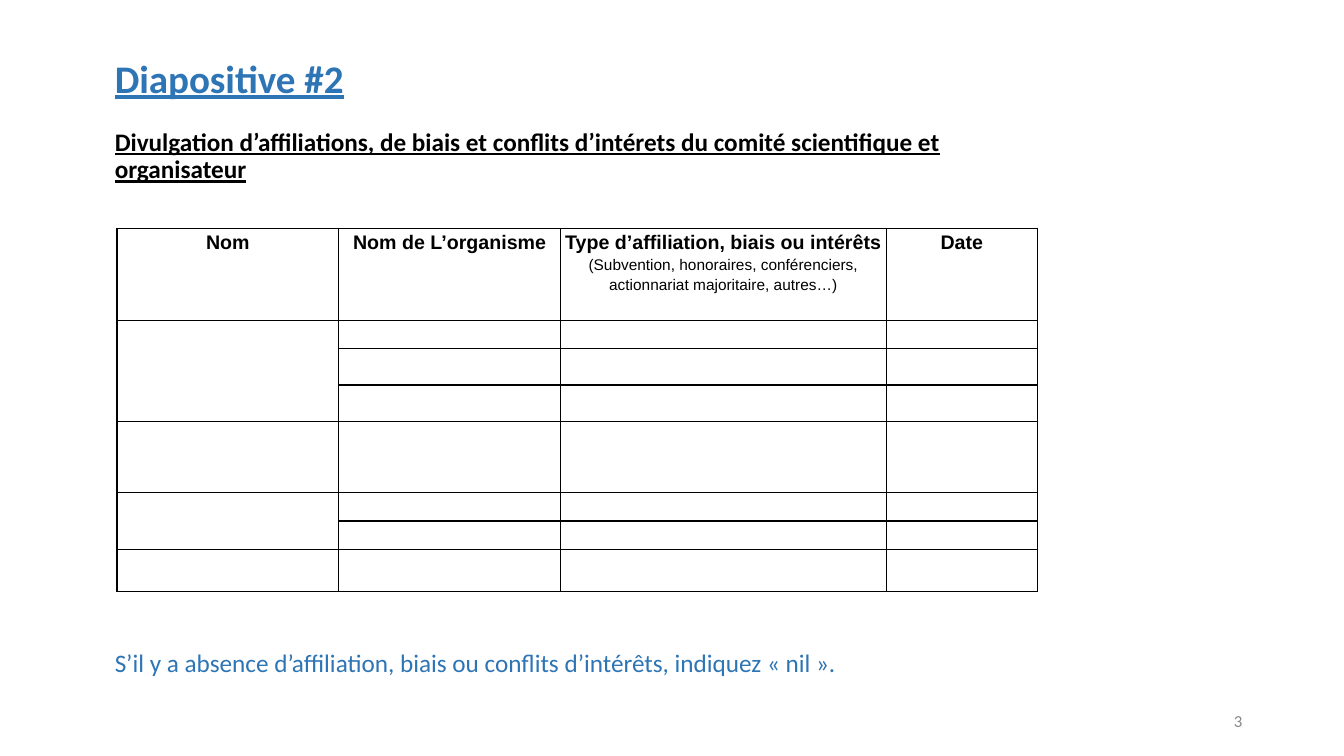
from lxml import etree
from pptx import Presentation
from pptx.dml.color import RGBColor
from pptx.enum import text
from pptx.oxml.ns import qn
from pptx.util import Inches, Pt

BLUE, BLACK, GREY = "2E75B5", "000000", "888888"


def style(para, size, color, font="Calibri", bold=False, underline=False):
    for span in para.runs:
        span.font.name = font
        span.font.size = Pt(size)
        span.font.bold = bold
        span.font.underline = underline
        span.font.color.rgb = RGBColor.from_string(color)


def add_text(page, left, top, width, height, content):
    box = page.shapes.add_textbox(Inches(left), Inches(top), Inches(width), Inches(height))
    box.text_frame.word_wrap = True
    box.text_frame.text = content
    return box.text_frame


deck = Presentation()
deck.slide_width, deck.slide_height = Inches(13.33), Inches(7.5)
page = deck.slides.add_slide(deck.slide_layouts[6])

# Heading and subtitle
heading = add_text(
    page, 1.04, 0.73, 8.63, 1.26,
    "Diapositive #2\n"
    "Divulgation d’affiliations, de biais et conflits d’intérets du comité scientifique et organisateur",
)
heading.vertical_anchor = text.MSO_ANCHOR.MIDDLE
heading.margin_bottom = Inches(0.35)
for para, size, color in zip(heading.paragraphs, (27.9, 18), (BLUE, BLACK)):
    para.line_spacing = 0.9
    style(para, size, color, bold=True, underline=True)
heading.paragraphs[1].space_before = Pt(20)

# Slide number
number = add_text(page, 9.42, 6.95, 3, 0.4, "3")
number.vertical_anchor = text.MSO_ANCHOR.MIDDLE
number.paragraphs[0].alignment = text.PP_ALIGN.RIGHT
style(number.paragraphs[0], 12, GREY)

# Disclosure table
headers = [
    "Nom",
    "Nom de L’organisme",
    "Type d’affiliation, biais ou intérêts\n"
    "(Subvention, honoraires, conférenciers, actionnariat majoritaire, autres…)",
    "Date",
]
column_widths = [2.2, 2.2, 3.23, 1.5]
row_heights = [0.91, 0.28, 0.36, 0.36, 0.71, 0.28, 0.28, 0.42]
table = page.shapes.add_table(
    len(row_heights), len(column_widths), Inches(1.16), Inches(2.27),
    Inches(sum(column_widths)), Inches(sum(row_heights)),
).table
table.first_row = table.horz_banding = False
for column, width in zip(table.columns, column_widths):
    column.width = Inches(width)
for row, height in zip(table.rows, row_heights):
    row.height = Inches(height)

for cell in table.iter_cells():
    cell.margin_left = cell.margin_right = Inches(0.03)
    cell.margin_top = cell.margin_bottom = 0
    properties = cell._tc.get_or_add_tcPr()
    for side in ("a:lnL", "a:lnR", "a:lnT", "a:lnB"):
        border = etree.SubElement(properties, qn(side), w=str(Pt(1)))
        fill = etree.SubElement(border, qn("a:solidFill"))
        etree.SubElement(fill, qn("a:srgbClr"), val=BLACK)
    cell.fill.background()

for column, header in enumerate(headers):
    cell = table.cell(0, column)
    cell.text_frame.text = header
    for index, para in enumerate(cell.text_frame.paragraphs):
        para.alignment = text.PP_ALIGN.CENTER
        para.line_spacing = 1.15
        style(para, 11 if index else 14, BLACK, font="Arial", bold=index == 0)
    for row in range(1, len(row_heights)):
        # A small end mark lets empty rows keep their height
        para = table.cell(row, column).text_frame.paragraphs[0]
        etree.SubElement(para._p, qn("a:endParaRPr"), sz=str(1200))

for first, last in ((1, 3), (5, 6)):
    table.cell(first, 0).merge(table.cell(last, 0))

# Instruction below the table
instruction = add_text(
    page, 1.04, 6.37, 9.15, 0.4,
    "S’il y a absence d’affiliation, biais ou conflits d’intérêts, indiquez « nil ».",
)
style(instruction.paragraphs[0], 18, BLUE)

deck.save("out.pptx")
